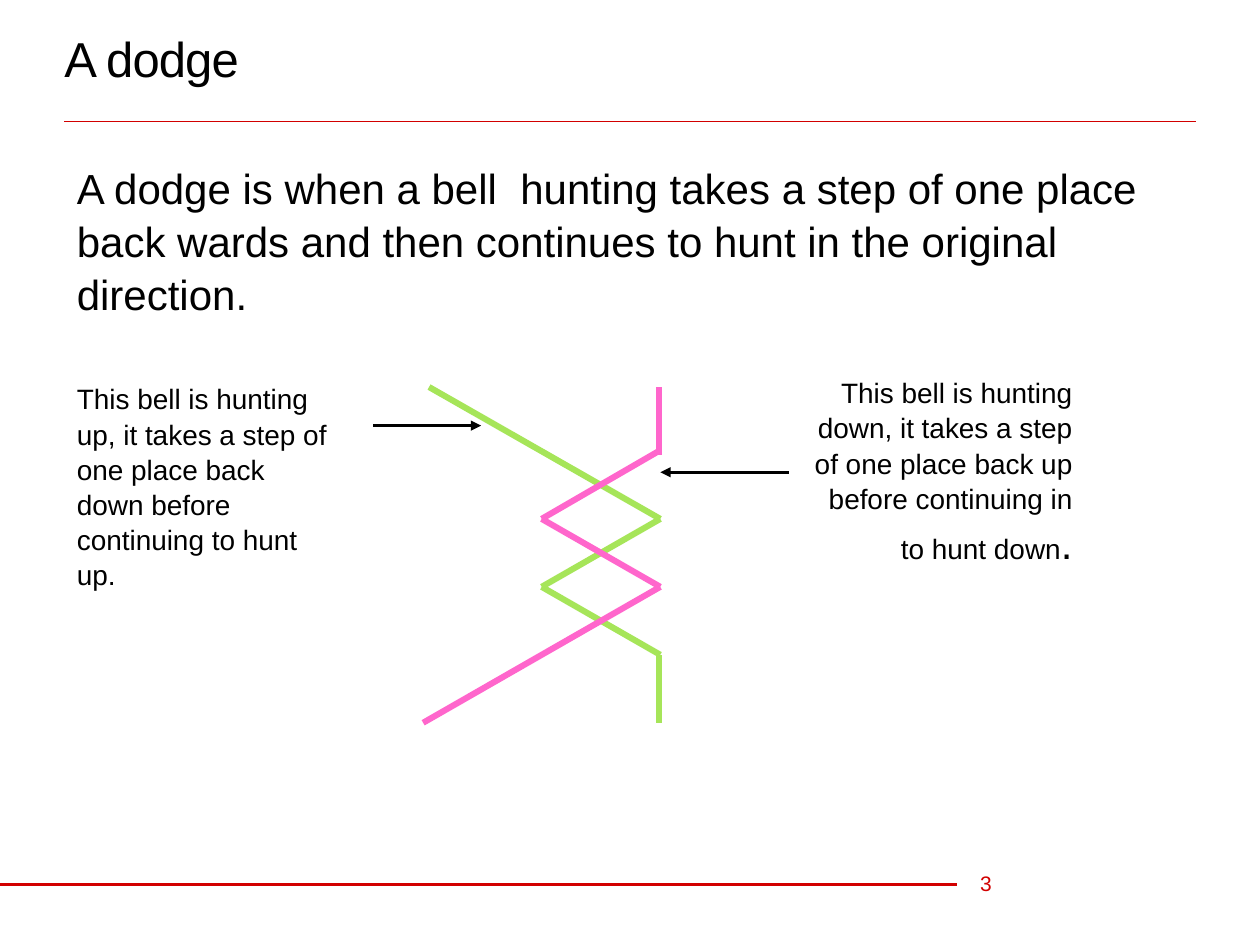
from dataclasses import dataclass

from lxml.etree import SubElement
from pptx import Presentation
from pptx.dml.color import RGBColor
from pptx.enum.shapes import MSO_CONNECTOR
from pptx.enum.text import MSO_ANCHOR, PP_ALIGN
from pptx.oxml.ns import qn
from pptx.util import Cm, Pt


@dataclass(frozen=True)
class Theme:
    font: str = "Arial"
    ink: str = "000000"
    red: str = "D20000"
    green: str = "A6E559"
    pink: str = "FF66CC"
    title: int = 28
    body: int = 24
    caption: int = 16
    number: int = 12
    bell_line: float = 3.5
    arrow_line: float = 1.75


THEME = Theme()
INSET = 0.25


def add_line(shapes, start, end, color, width, arrow=False):
    """Draw a straight line between two points given in centimetres."""
    line = shapes.add_connector(
        MSO_CONNECTOR.STRAIGHT, *(Cm(value) for value in (*start, *end)))
    line.line.color.rgb = RGBColor.from_string(color)
    line.line.width = Pt(width)
    properties = line._element.spPr
    if arrow:
        SubElement(properties.find(qn("a:ln")), qn("a:tailEnd"), type="triangle")
    SubElement(properties, qn("a:effectLst"))


def fill_text(shape, text, size, color=THEME.ink, inset=0.0,
              align=PP_ALIGN.LEFT, anchor=MSO_ANCHOR.TOP, spacing=1.05):
    """Write one formatted paragraph and return it."""
    frame = shape.text_frame
    frame.word_wrap = True
    frame.vertical_anchor = anchor
    frame.margin_left = frame.margin_right = Cm(inset)
    frame.margin_top = frame.margin_bottom = Cm(inset / 2)
    paragraph = frame.paragraphs[0]
    paragraph.add_run().text = text
    paragraph.alignment = align
    paragraph.line_spacing = spacing
    paragraph.font.name = THEME.font
    paragraph.font.size = Pt(size)
    paragraph.font.color.rgb = RGBColor.from_string(color)
    return paragraph


def add_text(slide, box, text, size, **options):
    shape = slide.shapes.add_textbox(*(Cm(value) for value in box))
    return fill_text(shape, text, size, **options)


def add_header(slide, box):
    left, top, width, height = box
    title = slide.shapes.title
    title.left, title.top, title.width, title.height = (Cm(value) for value in box)
    paragraph = fill_text(title, "A dodge", THEME.title,
                          anchor=MSO_ANCHOR.MIDDLE, spacing=1.0)
    # Tighten the letter spacing by half a point
    paragraph.runs[0].font._element.set("spc", "-50")
    rule = top + height + 0.25
    add_line(slide.shapes, (left, rule), (left + width, rule), THEME.red, 0.5)


def add_footer(slide, box):
    left, top, width, height = box
    middle = top + height / 2 + 0.02
    add_line(slide.shapes, (left, middle), (left + width, middle), THEME.red, 2)
    add_text(slide, (left + width + 0.46, top, 1.3, height), "3", THEME.number,
             color=THEME.red, anchor=MSO_ANCHOR.MIDDLE, spacing=1.0)


def add_bell_paths(slide, box):
    """Draw both bells on a grid of places (across) and rows (down)."""
    left, top, place, row = box

    def point(column, line):
        return left + column * place, top + line * row

    # Zigzag of each bell
    zigzags = (
        (THEME.green, ((-0.95, -0.94), (1, 1), (0, 2), (1, 3))),
        (THEME.pink, ((0.99, 0), (0, 1), (1, 2), (-1, 4))),
    )
    group = slide.shapes.add_group_shape()
    for color, stops in zigzags:
        for start, end in zip(stops, stops[1:]):
            add_line(group.shapes, point(*start), point(*end),
                     color, THEME.bell_line)
    # Straight blow at the end of green and the start of pink
    for color, first, last in ((THEME.green, 4, 3), (THEME.pink, 0.06, -0.94)):
        add_line(slide.shapes, point(0.99, first), point(0.99, last),
                 color, THEME.bell_line)


def add_captions(slide, box):
    """Place a caption with its arrow on each side of the bell paths."""
    left, top, width, height = box
    add_text(slide, (left, top, 5.74, height),
             "This bell is hunting up, it takes a step of one place back "
             "down before continuing to hunt up.",
             THEME.caption, inset=INSET)
    right_width = 5.41
    paragraph = add_text(
        slide, (left + width - right_width, top, right_width, height),
        "This bell is hunting down, it takes a step of one place back up "
        "before continuing in to hunt down",
        THEME.caption, align=PP_ALIGN.RIGHT)
    stop = paragraph.add_run()
    stop.text = "."
    stop.font.size = Pt(THEME.body)
    # Arrows: start, end and drop below the top of the box
    for start, end, drop in ((6.22, 8.4, 1.04), (14.6, 12.01, 1.98)):
        add_line(slide.shapes, (left + start, top + drop),
                 (left + end, top + drop), THEME.ink, THEME.arrow_line, arrow=True)


def main():
    presentation = Presentation()
    presentation.slide_width, presentation.slide_height = Cm(25.4), Cm(19.05)
    slide = presentation.slides.add_slide(presentation.slide_layouts[5])

    add_header(slide, (1.3, 0.13, 22.81, 2.06))
    add_text(slide, (1.3, 3.1, 22.81, 4.11),
             "A dodge is when a bell  hunting takes a step of one place "
             "back wards and then continues to hunt in the original direction.",
             THEME.body, inset=INSET)
    add_bell_paths(slide, (10.92, 9.09, 2.39, 1.37))
    add_captions(slide, (1.3, 7.54, 20.32, 4.37))
    add_footer(slide, (0, 17.3, 19.3, 1.02))

    presentation.save("out.pptx")


if __name__ == "__main__":
    main()
